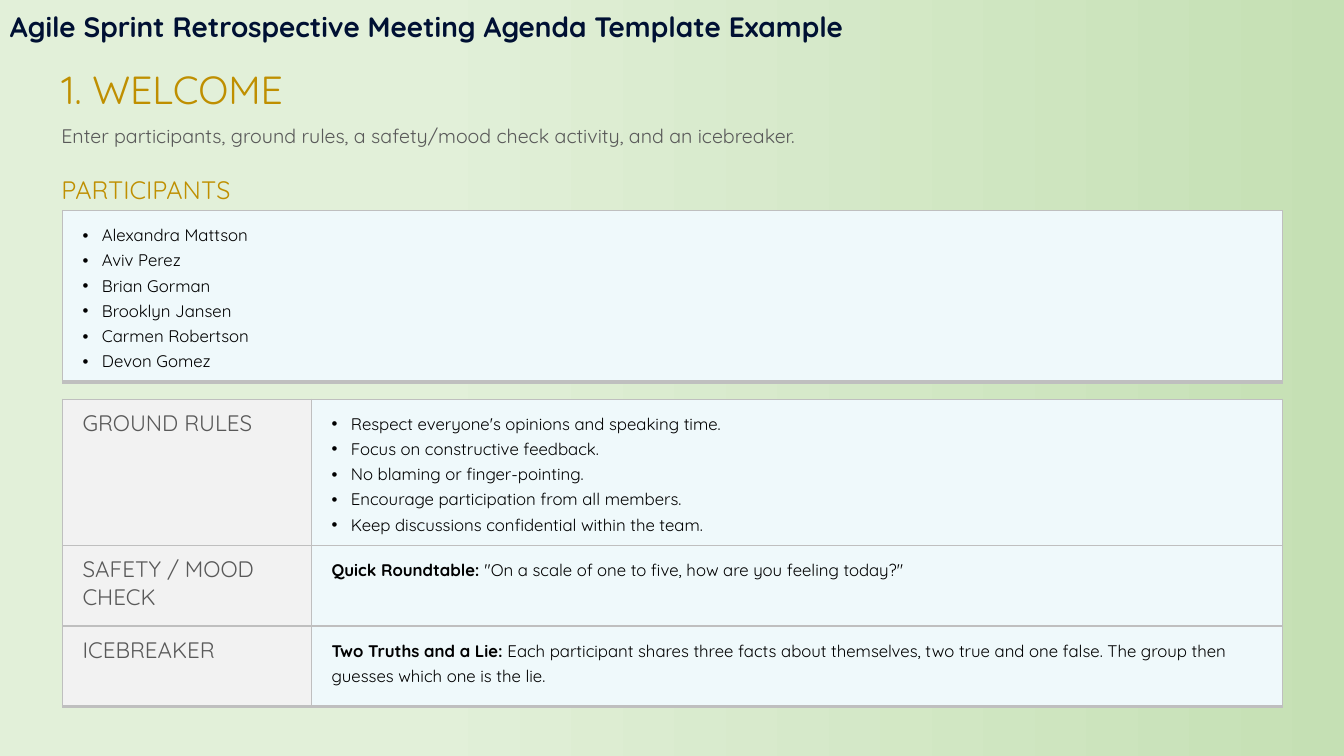
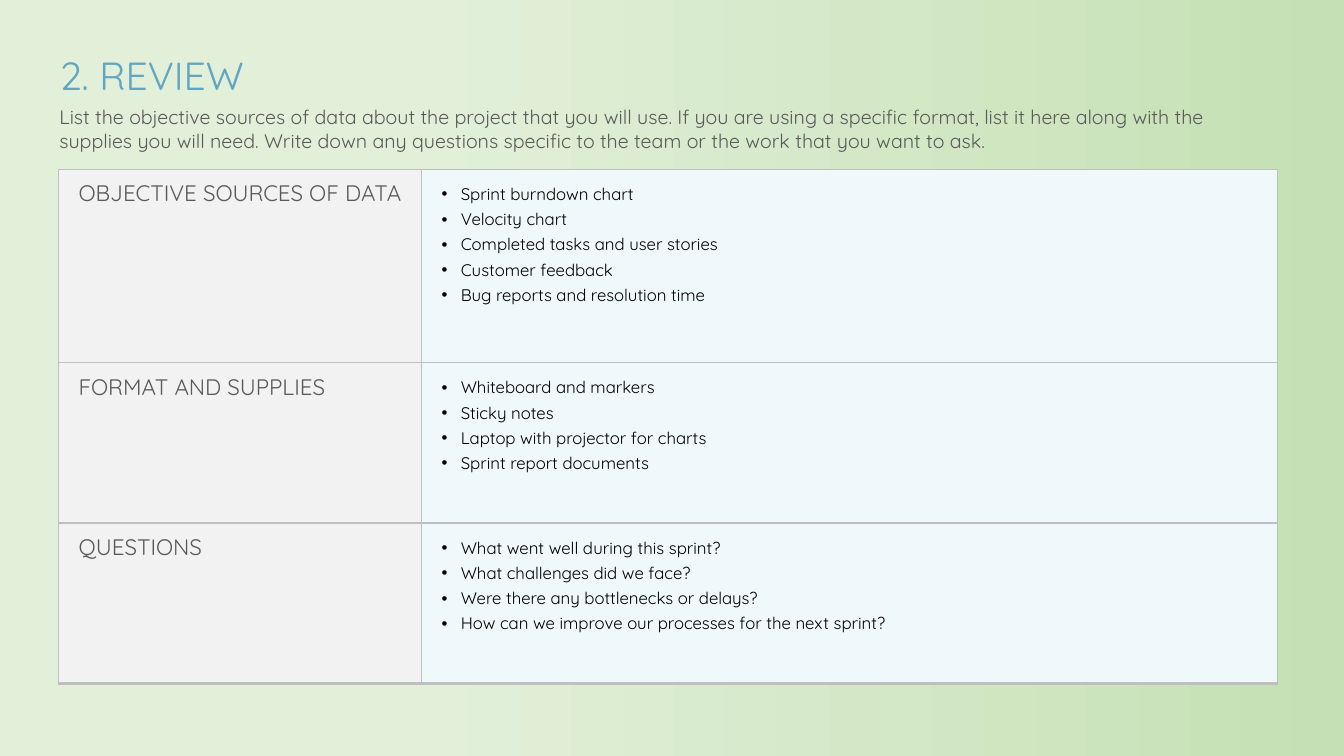
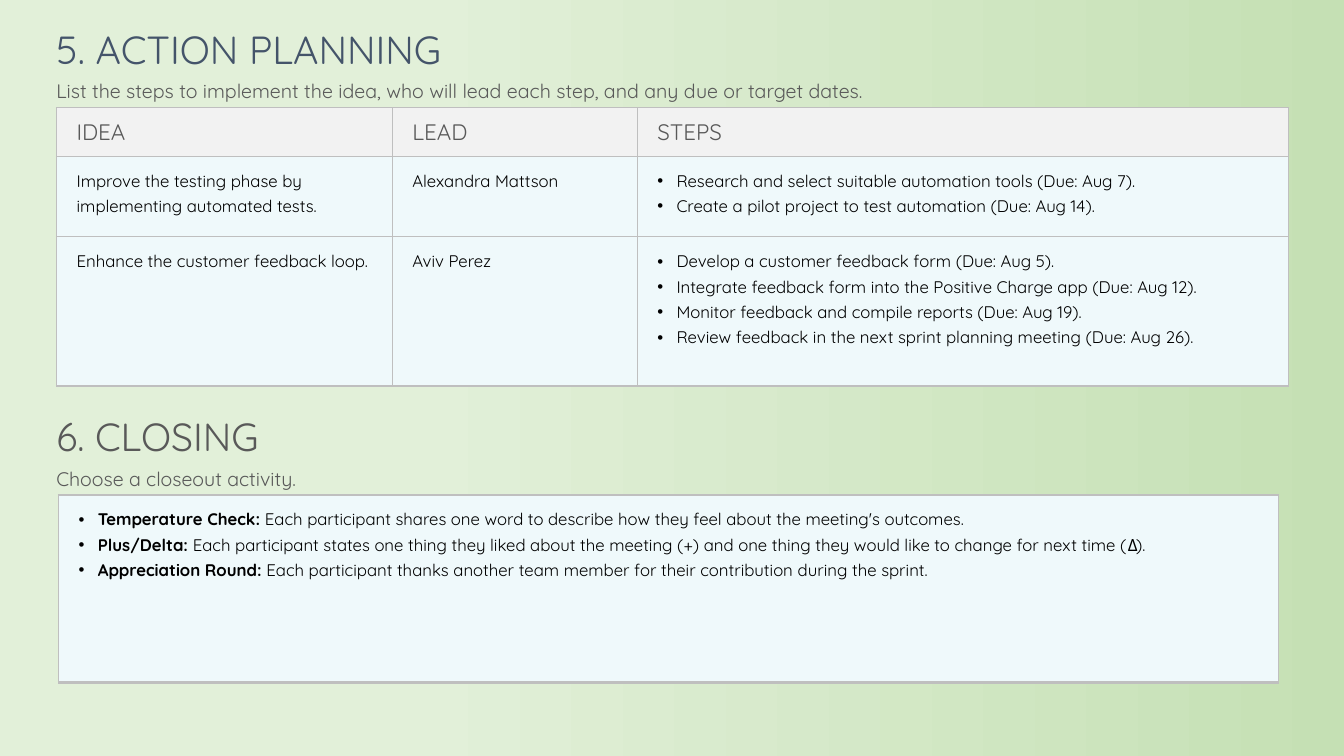
from lxml import etree
from pptx import Presentation
from pptx.dml.color import RGBColor
from pptx.enum.text import MSO_ANCHOR, MSO_AUTO_SIZE, PP_ALIGN
from pptx.oxml.ns import qn
from pptx.util import Inches, Pt

TOP, MIDDLE = MSO_ANCHOR.TOP, MSO_ANCHOR.MIDDLE
NO_AUTOFIT = MSO_AUTO_SIZE.NONE
LEFT = PP_ALIGN.LEFT

# Shared style
FONT = "Quicksand"
TITLE_ONLY_LAYOUT = 5
BLACK = RGBColor(0x00, 0x00, 0x00)
NAVY = RGBColor(0x00, 0x10, 0x33)
GOLD = RGBColor(0xBF, 0x8F, 0x00)
BLUE = RGBColor(0x61, 0xA5, 0xC3)
SLATE = RGBColor(0x44, 0x54, 0x6A)
GREY = RGBColor(0x59, 0x59, 0x59)
BORDER = RGBColor(0xBF, 0xBF, 0xBF)
LABEL_FILL = RGBColor(0xF2, 0xF2, 0xF2)
BODY_FILL = RGBColor(0xEF, 0xF9, 0xFB)
BACKGROUND_STOPS = [(0, RGBColor(0xC5, 0xE0, 0xB4)), (0.69, RGBColor(0xE2, 0xF0, 0xD9))]
BULLET_INDENT = Inches(0.19)

# Content. Text: a string is plain, a (lead, rest) tuple starts in bold.
# Table cell: a list is bulleted, anything else is one paragraph.
DECK_TITLE = "Agile Sprint Retrospective Meeting Agenda Template Example"

PARTICIPANTS = [[[
    "Alexandra Mattson", "Aviv Perez", "Brian Gorman",
    "Brooklyn Jansen", "Carmen Robertson", "Devon Gomez",
]]]

WELCOME = [
    ["GROUND RULES", [
        "Respect everyone's opinions and speaking time.",
        "Focus on constructive feedback.",
        "No blaming or finger-pointing.",
        "Encourage participation from all members.",
        "Keep discussions confidential within the team.",
    ]],
    ["SAFETY / MOOD CHECK",
     ("Quick Roundtable:", ' "On a scale of one to five, how are you feeling today?"')],
    ["ICEBREAKER",
     ("Two Truths and a Lie:",
      " Each participant shares three facts about themselves, two true and one false. "
      "The group then guesses which one is the lie.")],
]

REVIEW = [
    ["OBJECTIVE SOURCES OF DATA", [
        "Sprint burndown chart",
        "Velocity chart",
        "Completed tasks and user stories",
        "Customer feedback",
        "Bug reports and resolution time",
    ]],
    ["FORMAT AND SUPPLIES", [
        "Whiteboard and markers",
        "Sticky notes",
        "Laptop with projector for charts",
        "Sprint report documents",
    ]],
    ["QUESTIONS", [
        "What went well during this sprint?",
        "What challenges did we face?",
        "Were there any bottlenecks or delays?",
        "How can we improve our processes for the next sprint?",
    ]],
]

ACTIONS = [
    ["IDEA", "LEAD", "STEPS"],
    ["Improve the testing phase by implementing automated tests.", "Alexandra Mattson", [
        "Research and select suitable automation tools (Due: Aug 7).",
        "Create a pilot project to test automation (Due: Aug 14).",
    ]],
    ["Enhance the customer feedback loop.", "Aviv Perez", [
        "Develop a customer feedback form (Due: Aug 5).",
        "Integrate feedback form into the Positive Charge app (Due: Aug 12).",
        "Monitor feedback and compile reports (Due: Aug 19).",
        "Review feedback in the next sprint planning meeting (Due: Aug 26).",
    ]],
]

CLOSING = [[[
    ("Temperature Check:",
     " Each participant shares one word to describe how they feel about the meeting's outcomes."),
    ("Plus/Delta:",
     " Each participant states one thing they liked about the meeting (+) and one thing "
     "they would like to change for next time (Δ)."),
    ("Appreciation Round:",
     " Each participant thanks another team member for their contribution during the sprint."),
]]]

# Each slide: title, texts and tables.
# Heading: (text, colour, left, top, line spacing)
# Text: (text, size, colour, bold, anchor, left, top, width, height)
# Table: (rows, label place, left, top, column widths, row heights, bottom border)
SLIDES = [
    {
        "headings": [("1. WELCOME", GOLD, 0.51, 0.6, 1.0)],
        "texts": [
            (DECK_TITLE, 20, NAVY, True, TOP, 0, 0.05, 12.1, 0.44),
            ("Enter participants, ground rules, a safety/mood check activity, and an icebreaker.",
             14, GREY, False, MIDDLE, 0.51, 1.18, 9.2, 0.34),
            ("PARTICIPANTS", 18, GOLD, False, TOP, 0.51, 1.68, 2.4, 0.4),
        ],
        "tables": [
            (PARTICIPANTS, None, 0.62, 2.09, [12.1], [1.68], 3),
            (WELCOME, "column", 0.62, 3.96, [2.47, 9.63], [1.44, 0.8, 0.8], 2.25),
        ],
    },
    {
        "headings": [("2. REVIEW", BLUE, 0.49, 0.39, 1.15)],
        "texts": [
            ("List the objective sources of data about the project that you will use. If you are "
             "using a specific format, list it here along with the supplies you will need. Write "
             "down any questions specific to the team or the work that you want to ask.",
             14, GREY, False, MIDDLE, 0.49, 0.99, 12.22, 0.57),
        ],
        "tables": [(REVIEW, "column", 0.58, 1.68, [3.6, 8.49], [1.92, 1.59, 1.59], 2.25)],
    },
    {
        "headings": [
            ("5. ACTION PLANNING", SLATE, 0.46, 0.13, 1.15),
            ("6. CLOSING", GREY, 0.46, 3.97, 1.15),
        ],
        "texts": [
            ("List the steps to implement the idea, who will lead each step, "
             "and any due or target dates.",
             14, GREY, False, MIDDLE, 0.46, 0.73, 12.22, 0.34),
            ("Choose a closeout activity.", 14, GREY, False, MIDDLE, 0.46, 4.58, 12.22, 0.34),
        ],
        "tables": [
            (ACTIONS, "row", 0.56, 1.07, [3.33, 2.43, 6.46], [0.48, 0.8, 1.48], 1),
            (CLOSING, None, 0.58, 4.91, [12.1], [1.86], 3),
        ],
    },
]


def add_text(paragraph, text, size, color, bold=False):
    """Add a string, or a bold lead followed by plain text."""
    parts = [(text, bold)] if isinstance(text, str) else [(text[0], True), (text[1], False)]
    for part, is_bold in parts:
        run = paragraph.add_run()
        run.text = part
        run.font.name = FONT
        run.font.size = Pt(size)
        run.font.bold = is_bold
        run.font.color.rgb = color


def fill_box(shape, text, size, color, bold, anchor, left, top, width, height, spacing=1.0):
    shape.left, shape.top = Inches(left), Inches(top)
    shape.width, shape.height = Inches(width), Inches(height)
    frame = shape.text_frame
    frame.word_wrap = True
    frame.auto_size = NO_AUTOFIT
    frame.vertical_anchor = anchor
    paragraph = frame.paragraphs[0]
    paragraph.alignment = LEFT
    paragraph.line_spacing = spacing
    add_text(paragraph, text, size, color, bold)


def add_text_box(slide):
    return slide.shapes.add_textbox(0, 0, 0, 0)


def add_bullet(paragraph):
    properties = paragraph._p.get_or_add_pPr()
    properties.set("marL", str(BULLET_INDENT))
    properties.set("indent", str(-BULLET_INDENT))
    etree.SubElement(properties, qn("a:buFont")).set("typeface", "Arial")
    etree.SubElement(properties, qn("a:buChar")).set("char", "•")


def set_borders(cell, bottom_width):
    properties = cell._tc.get_or_add_tcPr()
    sides = [("L", 1), ("R", 1), ("T", 1), ("B", bottom_width)]
    for position, (side, width) in enumerate(sides):
        line = etree.Element(qn(f"a:ln{side}"), w=str(Pt(width)))
        fill = etree.SubElement(line, qn("a:solidFill"))
        etree.SubElement(fill, qn("a:srgbClr")).set("val", str(BORDER))
        properties.insert(position, line)


def fill_cell(cell, content, is_label, bottom_width):
    cell.margin_left = Inches(0.2)
    cell.margin_right = cell.margin_top = cell.margin_bottom = Inches(0.1)
    cell.fill.solid()
    cell.fill.fore_color.rgb = LABEL_FILL if is_label else BODY_FILL
    set_borders(cell, bottom_width)
    bulleted = isinstance(content, list)
    frame = cell.text_frame
    for index, text in enumerate(content if bulleted else [content]):
        paragraph = frame.add_paragraph() if index else frame.paragraphs[0]
        if is_label:
            add_text(paragraph, text, 16, GREY)
            continue
        paragraph.line_spacing = Pt(18)
        if bulleted:
            add_bullet(paragraph)
        add_text(paragraph, text, 12, BLACK)


def add_grid(slide, rows, label_place, left, top, widths, heights, bottom_width):
    table = slide.shapes.add_table(
        len(heights), len(widths), Inches(left), Inches(top),
        Inches(sum(widths)), Inches(sum(heights))).table
    table.first_row = table.horz_banding = False
    for column, width in zip(table.columns, widths):
        column.width = Inches(width)
    for row, height in zip(table.rows, heights):
        row.height = Inches(height)
    for row_index, row in enumerate(rows):
        is_last = row_index == len(rows) - 1
        for column_index, content in enumerate(row):
            is_label = (label_place == "row" and row_index == 0
                        or label_place == "column" and column_index == 0)
            fill_cell(table.cell(row_index, column_index), content, is_label,
                      bottom_width if is_last else 1)


def set_background(master):
    fill = master.background.fill
    fill.gradient()
    fill.gradient_angle = 180
    for stop, (position, color) in zip(fill.gradient_stops, BACKGROUND_STOPS):
        stop.position = position
        stop.color.rgb = color


def main():
    presentation = Presentation()
    presentation.slide_width, presentation.slide_height = Inches(13.33), Inches(7.5)
    set_background(presentation.slide_master)
    layout = presentation.slide_layouts[TITLE_ONLY_LAYOUT]
    for content in SLIDES:
        slide = presentation.slides.add_slide(layout)
        # The first heading is the slide title, a later one opens a second section
        for index, (text, color, left, top, spacing) in enumerate(content["headings"]):
            shape = add_text_box(slide) if index else slide.shapes.title
            fill_box(shape, text, 28, color, False, TOP, left, top, 4.25, 0.6, spacing)
        for text in content["texts"]:
            fill_box(add_text_box(slide), *text)
        for table in content["tables"]:
            add_grid(slide, *table)
    presentation.save("out.pptx")


if __name__ == "__main__":
    main()
